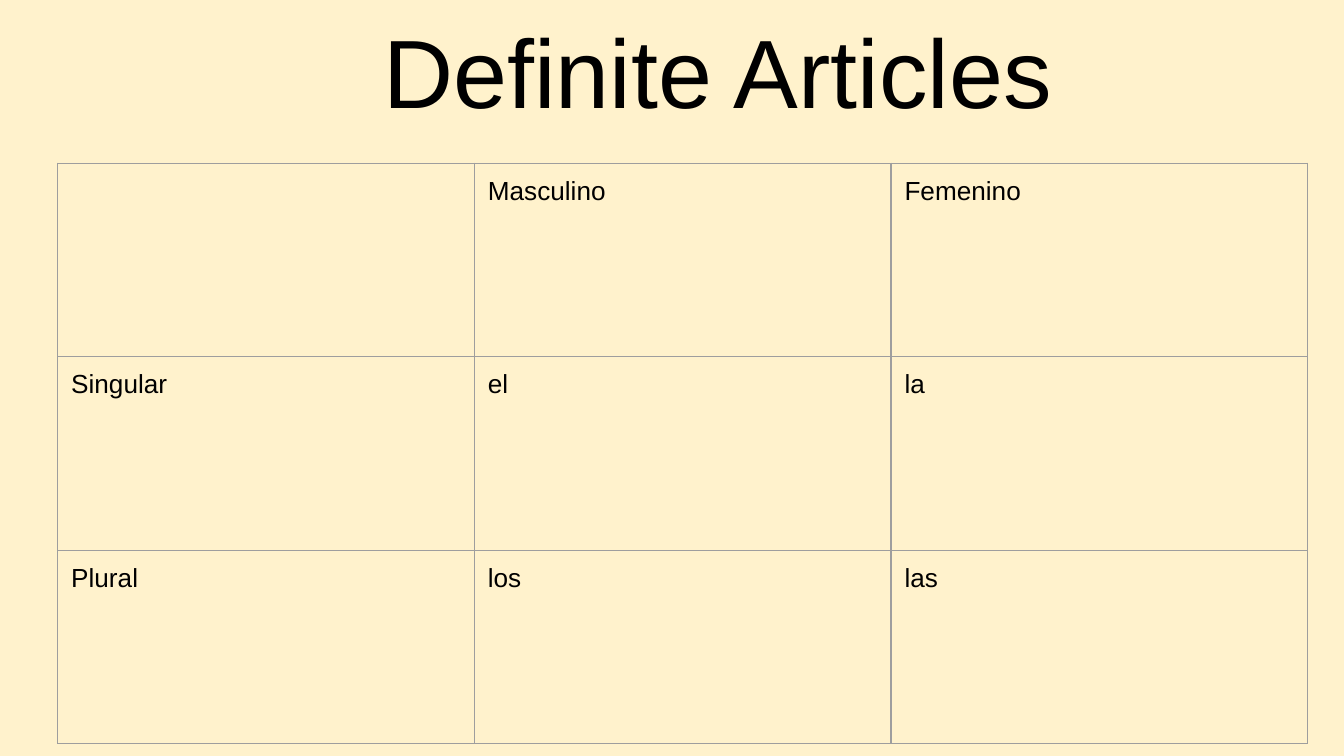
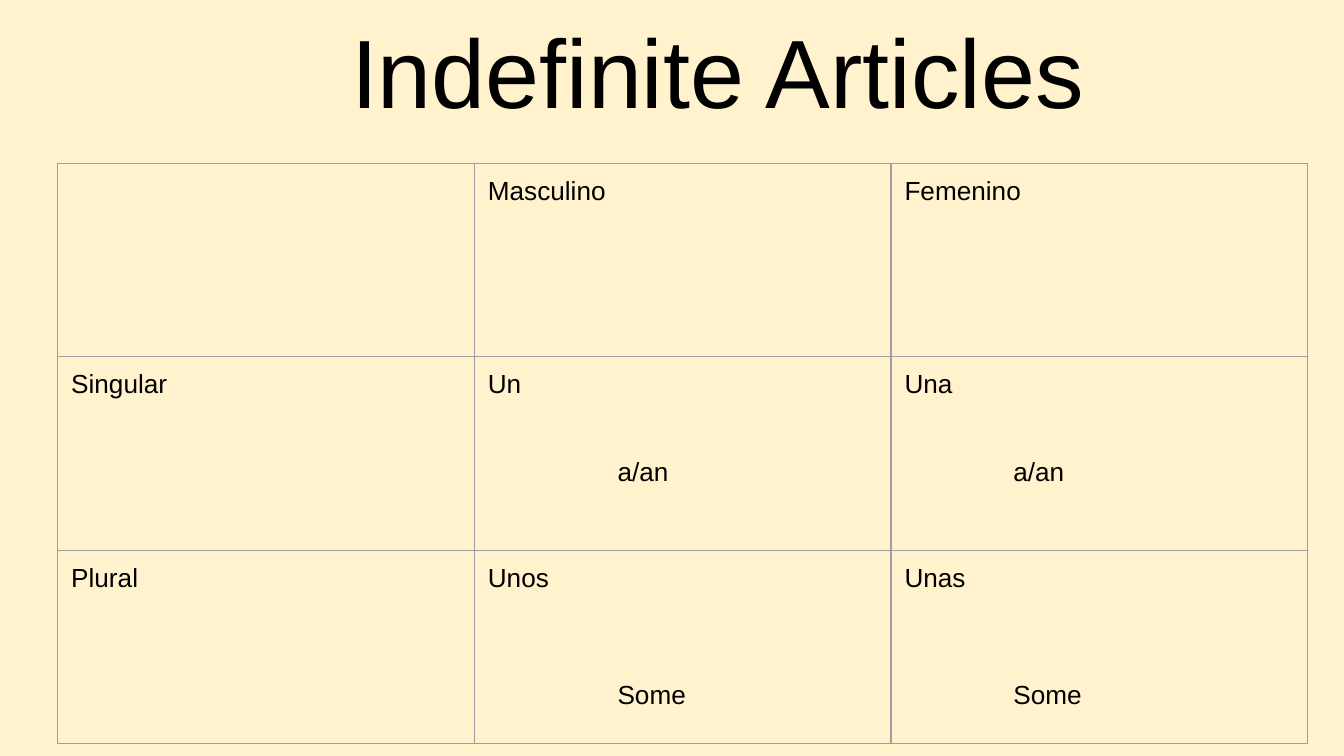
from dataclasses import dataclass

from lxml import etree
from pptx import Presentation
from pptx import util as u
from pptx.dml.color import RGBColor
from pptx.enum import text
from pptx.oxml.ns import qn

PX = 4572  # EMU per px, 200 px to the inch
SLIDE_W, SLIDE_H = 2000, 1125
TITLE_BOX = (136, 108, 1864, 268)
TITLE_DROP = 186  # bottom inset that lifts the title above the table
TABLE_LEFT, TABLE_TOP = 86, 243
COL_W, ROW_H = 620, 288
INSET = 20
FONT = "Arial"
TITLE_PT, CELL_PT, BORDER_PT = 52, 14, 0.75
COLORS = {"background": "FFF2CC", "text": "000000", "border": "9E9E9E"}
HEADER = ("", "Masculino", "Femenino")
MEANING_INDENTS = (193, 162)  # masculine, feminine


@dataclass(frozen=True)
class ArticleRow:
    label: str
    masculine: str
    feminine: str
    meaning: str = ""
    meaning_gap_pt: int = 0


@dataclass(frozen=True)
class ArticleSlide:
    title: str
    rows: tuple[ArticleRow, ...]


SLIDES = (
    ArticleSlide("Definite Articles", (
        ArticleRow("Singular", "el", "la"),
        ArticleRow("Plural", "los", "las"),
    )),
    ArticleSlide("Indefinite Articles", (
        ArticleRow("Singular", "Un", "Una", "a/an", 31),
        ArticleRow("Plural", "Unos", "Unas", "Some", 47),
    )),
)


def px(n: int) -> u.Emu:
    return u.Emu(n * PX)


def rgb(name: str) -> RGBColor:
    return RGBColor.from_string(COLORS[name])


def format_runs(p, size: int) -> None:
    for r in p.runs:
        r.font.name = FONT
        r.font.size = u.Pt(size)
        r.font.color.rgb = rgb("text")


def add_title(s, title: str) -> None:
    sp = s.shapes.title
    sp.left, sp.top, sp.width, sp.height = map(px, TITLE_BOX)
    tf = sp.text_frame
    tf.text = title
    tf.word_wrap = True
    tf.auto_size = text.MSO_AUTO_SIZE.NONE
    tf.vertical_anchor = text.MSO_ANCHOR.BOTTOM
    tf.margin_left = tf.margin_right = px(INSET)
    tf.margin_top, tf.margin_bottom = px(0), px(TITLE_DROP)
    p = tf.paragraphs[0]
    p.alignment = text.PP_ALIGN.CENTER
    format_runs(p, TITLE_PT)


def style_cell(cell) -> None:
    """Give the cell its insets, a thin border on every side and no fill."""
    cell.margin_left = cell.margin_right = px(INSET)
    cell.margin_top = cell.margin_bottom = px(INSET)
    tc_pr = cell._tc.get_or_add_tcPr()
    for side in ("lnL", "lnR", "lnT", "lnB"):
        ln = etree.SubElement(tc_pr, qn(f"a:{side}"), w=str(u.Pt(BORDER_PT)))
        fill = etree.SubElement(ln, qn("a:solidFill"))
        etree.SubElement(fill, qn("a:srgbClr"), val=COLORS["border"])
    cell.fill.background()


def add_meaning(cell, row: ArticleRow, indent: int) -> None:
    p = cell.text_frame.add_paragraph()
    p.text = row.meaning
    p.space_before = u.Pt(row.meaning_gap_pt)
    p._p.get_or_add_pPr().set("marL", str(px(indent)))


def add_article_table(s, rows: tuple[ArticleRow, ...]) -> None:
    n_rows, n_cols = len(rows) + 1, len(HEADER)
    table = s.shapes.add_table(n_rows, n_cols, px(TABLE_LEFT), px(TABLE_TOP),
                               px(COL_W * n_cols), px(ROW_H * n_rows)).table
    table.first_row = table.horz_banding = False
    words = [HEADER] + [(r.label, r.masculine, r.feminine) for r in rows]
    for i, line in enumerate(words):
        for j, word in enumerate(line):
            cell = table.cell(i, j)
            cell.text_frame.text = word
            style_cell(cell)
            if i and j and rows[i - 1].meaning:
                add_meaning(cell, rows[i - 1], MEANING_INDENTS[j - 1])
            for p in cell.text_frame.paragraphs:
                format_runs(p, CELL_PT)


def main() -> None:
    prs = Presentation()
    prs.slide_width, prs.slide_height = px(SLIDE_W), px(SLIDE_H)
    for content in SLIDES:
        s = prs.slides.add_slide(prs.slide_layouts[5])
        s.background.fill.solid()
        s.background.fill.fore_color.rgb = rgb("background")
        add_title(s, content.title)
        add_article_table(s, content.rows)
    prs.save("out.pptx")


if __name__ == "__main__":
    main()
